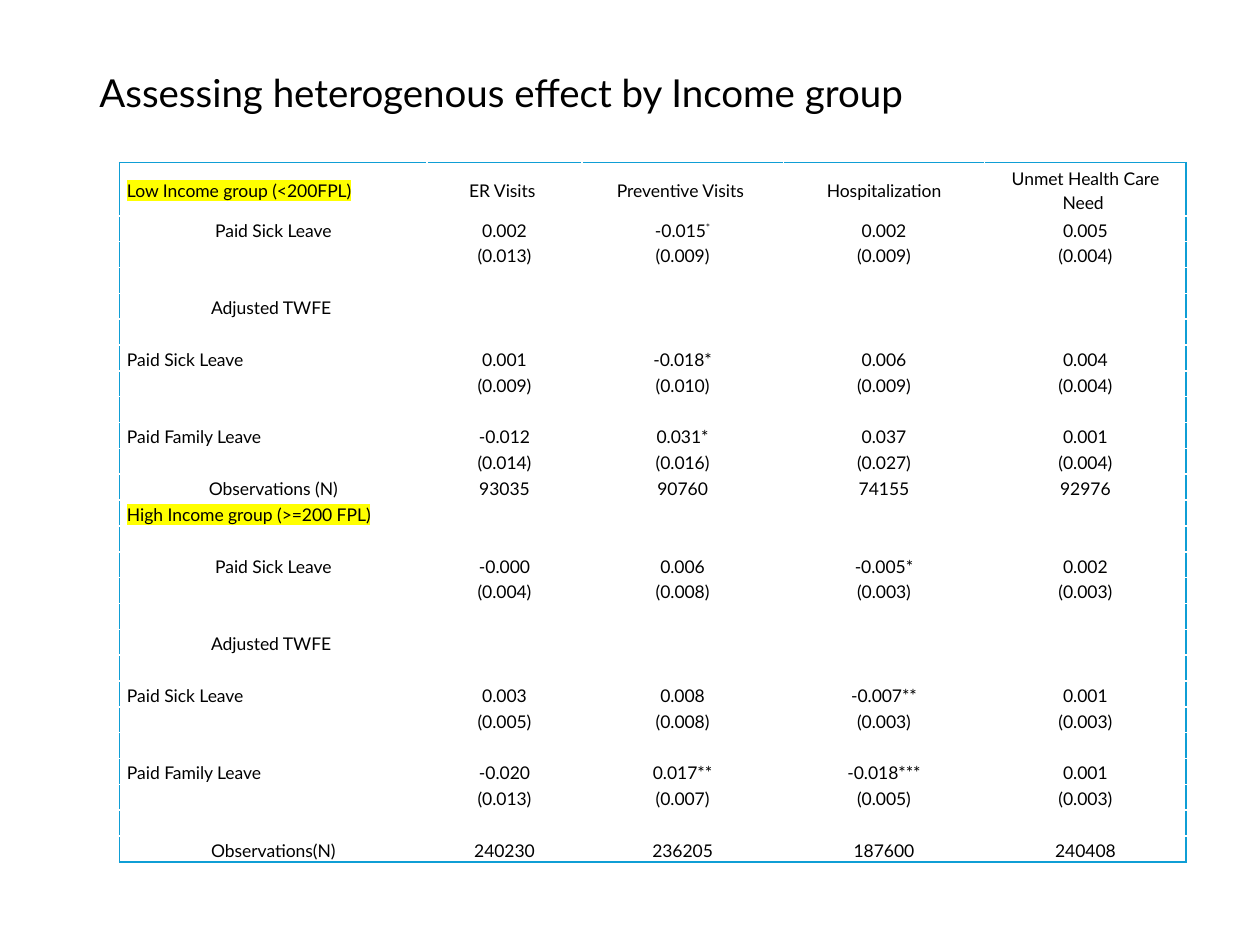
from dataclasses import dataclass

from lxml import etree
from pptx import Presentation
from pptx import util as u
from pptx.dml.color import RGBColor
from pptx.enum import text
from pptx.oxml.ns import qn


@dataclass(frozen=True)
class Theme:
    font: str = "Lato"
    ink: str = "000000"
    border: str = "0F9ED5"
    mark: str = "FFFF00"
    title_size: int = 22
    body_size: int = 10
    border_width: int = 1


THEME = Theme()
LEFT, CENTER = text.PP_ALIGN.LEFT, text.PP_ALIGN.CENTER

COLUMN_WIDTHS = [6.2, 3.12, 4.06, 4.06, 4.06]
HEADER_HEIGHT = 1.07
BLANK = ("", LEFT, [])
ADJUSTED = ("Adjusted TWFE ", CENTER, [])
LOW_INCOME = "Low Income group (<200FPL)"
HIGH_INCOME = "High Income group (>=200 FPL)"

# Each row: label, label alignment, values. "^" starts a superscript.
ROWS = [
    (LOW_INCOME, LEFT,
     ["ER Visits ", "Preventive Visits ", "Hospitalization", "Unmet Health Care Need "]),
    ("Paid Sick Leave", CENTER, ["0.002", "-0.015^*", "0.002", "0.005"]),
    ("", LEFT, ["(0.013)", "(0.009)", "(0.009)", "(0.004)"]),
    BLANK,
    ADJUSTED,
    BLANK,
    ("Paid Sick Leave", LEFT, ["0.001", "-0.018*", "0.006", "0.004"]),
    ("", LEFT, ["(0.009)", "(0.010)", "(0.009)", "(0.004)"]),
    BLANK,
    ("Paid Family Leave", LEFT, ["-0.012", "0.031*", "0.037", "0.001"]),
    ("", LEFT, ["(0.014)", "(0.016)", "(0.027)", "(0.004)"]),
    ("Observations (N)", CENTER, ["93035", "90760", "74155", "92976"]),
    (HIGH_INCOME, LEFT, []),
    BLANK,
    ("Paid Sick Leave", CENTER, ["-0.000", "0.006", "-0.005*", "0.002"]),
    ("", LEFT, ["(0.004)", "(0.008)", "(0.003)", "(0.003)"]),
    BLANK,
    ADJUSTED,
    BLANK,
    ("Paid Sick Leave", LEFT, ["0.003", "0.008", "-0.007**", "0.001"]),
    ("", LEFT, ["(0.005)", "(0.008)", "(0.003)", "(0.003)"]),
    BLANK,
    ("Paid Family Leave", LEFT, ["-0.020", "0.017**", "-0.018***", "0.001"]),
    ("", LEFT, ["(0.013)", "(0.007)", "(0.005)", "(0.003)"]),
    BLANK,
    ("Observations(N)", CENTER, ["240230", "236205", "187600", "240408"]),
]
HIGH_ROW = [row[0] for row in ROWS].index(HIGH_INCOME)
MERGED_ROWS = (HIGH_ROW, HIGH_ROW + 1)


def write(tf, content, size=THEME.body_size, align=LEFT, spacing=1.15, after=0, highlight=None):
    p = tf.paragraphs[0]
    p.alignment, p.line_spacing, p.space_after = align, spacing, u.Pt(after)
    if not content:
        # An empty cell keeps its row low only if its paragraph mark is small.
        etree.SubElement(p._p, qn("a:endParaRPr"), sz=str(size * 100))
        return
    for i, part in enumerate(content.split("^")):
        r = p.add_run()
        r.text = part
        r.font.size = u.Pt(size)
        r.font.color.rgb = RGBColor.from_string(THEME.ink)
        rPr = r._r.get_or_add_rPr()
        if i:
            rPr.set("baseline", "30000")
        if highlight:
            mark = etree.SubElement(rPr, qn("a:highlight"))
            etree.SubElement(mark, qn("a:srgbClr"), val=highlight)
        r.font.name = THEME.font


def draw_borders(cell, sides):
    """Outline the given sides, which must be in the order L, R, T, B."""
    tcPr = cell._tc.get_or_add_tcPr()
    for side in sides:
        ln = etree.SubElement(tcPr, qn("a:ln" + side), w=str(u.Pt(THEME.border_width)))
        fill = etree.SubElement(ln, qn("a:solidFill"))
        etree.SubElement(fill, qn("a:srgbClr"), val=THEME.border)


def add_title(slide, content, left, top, width, height):
    sp = slide.shapes.title
    sp.left, sp.top, sp.width, sp.height = map(u.Cm, (left, top, width, height))
    tf = sp.text_frame
    tf.auto_size = text.MSO_AUTO_SIZE.NONE
    tf.vertical_anchor = text.MSO_ANCHOR.MIDDLE
    write(tf, content, size=THEME.title_size, spacing=0.9)


def add_results_table(slide, left, top, width, height):
    last_row, last_col = len(ROWS) - 1, len(COLUMN_WIDTHS) - 1
    table = slide.shapes.add_table(
        len(ROWS), len(COLUMN_WIDTHS), *map(u.Cm, (left, top, width, height))).table
    table.first_row = table.horz_banding = False
    for column, share in zip(table.columns, COLUMN_WIDTHS):
        column.width = u.Cm(width * share / sum(COLUMN_WIDTHS))
    for i, row in enumerate(table.rows):
        row.height = u.Cm(HEADER_HEIGHT if i == 0 else (height - HEADER_HEIGHT) / last_row)

    for i, (label, label_align, values) in enumerate(ROWS):
        contents = [label] + (values or [""] * last_col)
        for j, content in enumerate(contents):
            cell = table.cell(i, j)
            cell.margin_left = cell.margin_right = u.Cm(0.15)
            cell.margin_top = cell.margin_bottom = 0
            cell.vertical_anchor = text.MSO_ANCHOR.MIDDLE
            at_right = j == last_col or i in MERGED_ROWS
            edges = {"L": j == 0, "R": at_right, "T": i == 0, "B": i == last_row}
            draw_borders(cell, [side for side, on in edges.items() if on])
            cell.fill.background()
            is_group = content in (LOW_INCOME, HIGH_INCOME)
            write(cell.text_frame, content, after=8,
                  align=CENTER if j else label_align,
                  highlight=THEME.mark if is_group else None)
    for i in MERGED_ROWS:
        table.cell(i, 0).merge(table.cell(i, last_col))


def main():
    prs = Presentation()
    prs.slide_width, prs.slide_height = u.Cm(25.4), u.Cm(19.05)
    slide = prs.slides.add_slide(prs.slide_layouts[5])
    add_title(slide, "Assessing heterogenous effect by Income group", 1.75, 1.02, 21.9, 1.78)
    add_results_table(slide, 2.41, 3.28, 21.5, 14.1)
    prs.save("out.pptx")


if __name__ == "__main__":
    main()
